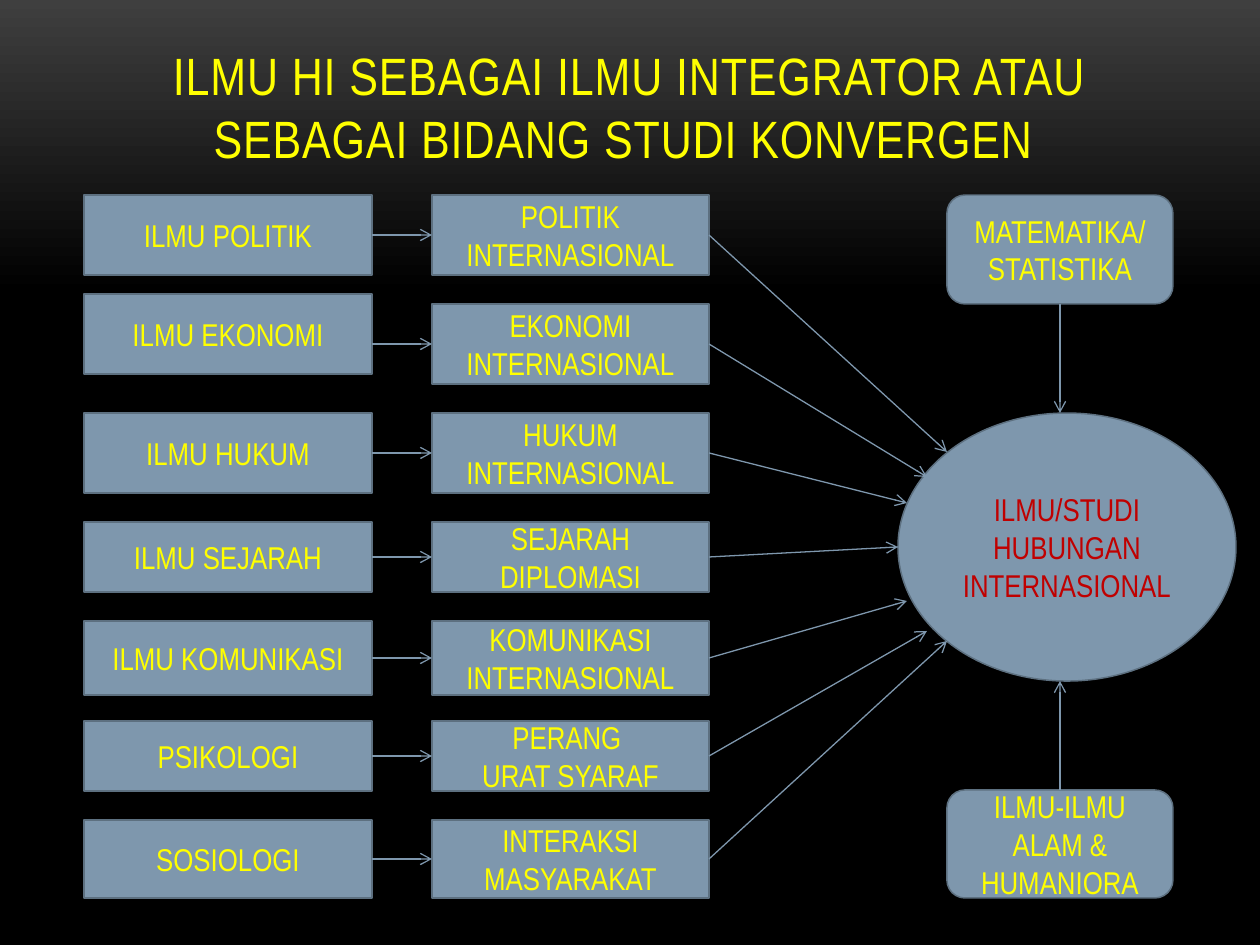
from dataclasses import dataclass
from typing import NamedTuple

import pptx
import pptx.dml.color
import pptx.enum.shapes
import pptx.enum.text
import pptx.oxml
import pptx.oxml.ns
import pptx.util

PX_PER_INCH = 126
SHAPES = pptx.enum.shapes.MSO_SHAPE


@dataclass(frozen=True)
class Theme:
    font: str = "Arial Narrow"
    title_size: int = 30
    body_size: int = 18
    text: str = "FFFF00"
    accent_text: str = "C00000"
    fill: str = "7E97AD"
    border: str = "5D7080"
    background_top: str = "3F3F3F"
    background: str = "000000"
    border_width: float = 0.85
    arrow_width: float = 0.75


class Box(NamedTuple):
    left: int
    top: int
    width: int
    height: int

    @property
    def middle(self) -> int:
        return self.top + self.height // 2


class Row(NamedTuple):
    science: str
    field: str
    top: int
    height: int
    target: tuple[int, int]  # where the arrow meets the ellipse
    science_lift: int = 0


THEME = Theme()
SCIENCE_LEFT, SCIENCE_WIDTH = 84, 288
FIELD_LEFT, FIELD_WIDTH = 432, 277
HUB = Box(898, 413, 338, 268)
MATHEMATICS = Box(947, 195, 226, 109)
HUMANITIES = Box(947, 790, 226, 108)

ROWS = [
    Row("ILMU POLITIK", "POLITIK INTERNASIONAL", 195, 80, (947, 452)),
    Row("ILMU EKONOMI", "EKONOMI INTERNASIONAL", 304, 80, (927, 477), 10),
    Row("ILMU HUKUM", "HUKUM INTERNASIONAL", 413, 80, (907, 503)),
    Row("ILMU SEJARAH", "SEJARAH DIPLOMASI", 522, 70, (898, 547)),
    Row("ILMU KOMUNIKASI", "KOMUNIKASI INTERNASIONAL", 621, 74, (907, 601)),
    Row("PSIKOLOGI", "PERANG \nURAT SYARAF", 721, 70, (927, 631)),
    Row("SOSIOLOGI", "INTERAKSI MASYARAKAT", 820, 78, (947, 641)),
]


def px(length: int) -> int:
    return pptx.util.Inches(length / PX_PER_INCH)


def rgb(value: str) -> pptx.dml.color.RGBColor:
    return pptx.dml.color.RGBColor.from_string(value)


def format_text(text_frame, size: int, color: str) -> None:
    text_frame.word_wrap = True
    text_frame.auto_size = pptx.enum.text.MSO_AUTO_SIZE.NONE
    for paragraph in text_frame.paragraphs:
        paragraph.alignment = pptx.enum.text.PP_ALIGN.CENTER
        for run in paragraph.runs:
            run.font.name = THEME.font
            run.font.size = pptx.util.Pt(size)
            run.font.color.rgb = rgb(color)


def add_box(slide, box: Box, text: str, kind=SHAPES.RECTANGLE, color: str = THEME.text) -> None:
    shape = slide.shapes.add_shape(kind, *map(px, box))
    shape.shadow.inherit = False
    shape.fill.solid()
    shape.fill.fore_color.rgb = rgb(THEME.fill)
    shape.line.color.rgb = rgb(THEME.border)
    shape.line.width = pptx.util.Pt(THEME.border_width)
    shape.text_frame.text = text
    shape.text_frame.vertical_anchor = pptx.enum.text.MSO_ANCHOR.MIDDLE
    format_text(shape.text_frame, THEME.body_size, color)


def add_arrow(slide, start: tuple[int, int], end: tuple[int, int]) -> None:
    connector = slide.shapes.add_connector(
        pptx.enum.shapes.MSO_CONNECTOR.STRAIGHT, *map(px, start + end))
    connector.line.color.rgb = rgb(THEME.fill)
    connector.line.width = pptx.util.Pt(THEME.arrow_width)
    namespace = pptx.oxml.ns.nsdecls("a")
    line = connector.line._get_or_add_ln()
    line.append(pptx.oxml.parse_xml(f'<a:tailEnd {namespace} type="arrow"/>'))
    properties = connector._element.spPr
    properties.append(pptx.oxml.parse_xml(f"<a:effectLst {namespace}/>"))


def set_background(slide) -> None:
    fill = slide.background.fill
    fill.gradient()
    fill.gradient_angle = 270
    stops = [(0, THEME.background_top), (0.31, THEME.background)]
    for stop, (position, color) in zip(fill.gradient_stops, stops):
        stop.position = position
        stop.color.rgb = rgb(color)


def set_title(slide, box: Box, text: str) -> None:
    title = slide.shapes.title
    title.left, title.top, title.width, title.height = map(px, box)
    title.text_frame.text = text
    title.text_frame.vertical_anchor = pptx.enum.text.MSO_ANCHOR.BOTTOM
    format_text(title.text_frame, THEME.title_size, THEME.text)
    for run in title.text_frame.paragraphs[0].runs:
        run.font._element.set("spc", "50")


def main() -> None:
    presentation = pptx.Presentation()
    presentation.slide_width = px(1260)
    presentation.slide_height = px(945)
    slide = presentation.slides.add_slide(presentation.slide_layouts[5])
    set_background(slide)
    set_title(slide, Box(84, 38, 1092, 137),
              "ILMU HI SEBAGAI ILMU INTEGRATOR ATAU SEBAGAI BIDANG STUDI KONVERGEN ")

    # Hub and its two supporting sciences
    add_box(slide, HUB, "ILMU/STUDI HUBUNGAN INTERNASIONAL", SHAPES.OVAL, THEME.accent_text)
    add_box(slide, MATHEMATICS, "MATEMATIKA/ STATISTIKA", SHAPES.ROUNDED_RECTANGLE)
    add_box(slide, HUMANITIES, "ILMU-ILMU ALAM & HUMANIORA", SHAPES.ROUNDED_RECTANGLE)
    center = MATHEMATICS.left + MATHEMATICS.width // 2
    add_arrow(slide, (center, MATHEMATICS.top + MATHEMATICS.height), (center, HUB.top))
    add_arrow(slide, (center, HUMANITIES.top), (center, HUB.top + HUB.height))

    # Each science leads to a field, and each field to the hub
    for row in ROWS:
        science = Box(SCIENCE_LEFT, row.top - row.science_lift, SCIENCE_WIDTH, row.height)
        field = Box(FIELD_LEFT, row.top, FIELD_WIDTH, row.height)
        add_box(slide, science, row.science)
        add_box(slide, field, row.field)
        add_arrow(slide, (SCIENCE_LEFT + SCIENCE_WIDTH, field.middle), (FIELD_LEFT, field.middle))
        add_arrow(slide, (FIELD_LEFT + FIELD_WIDTH, field.middle), row.target)

    presentation.save("out.pptx")


if __name__ == "__main__":
    main()
